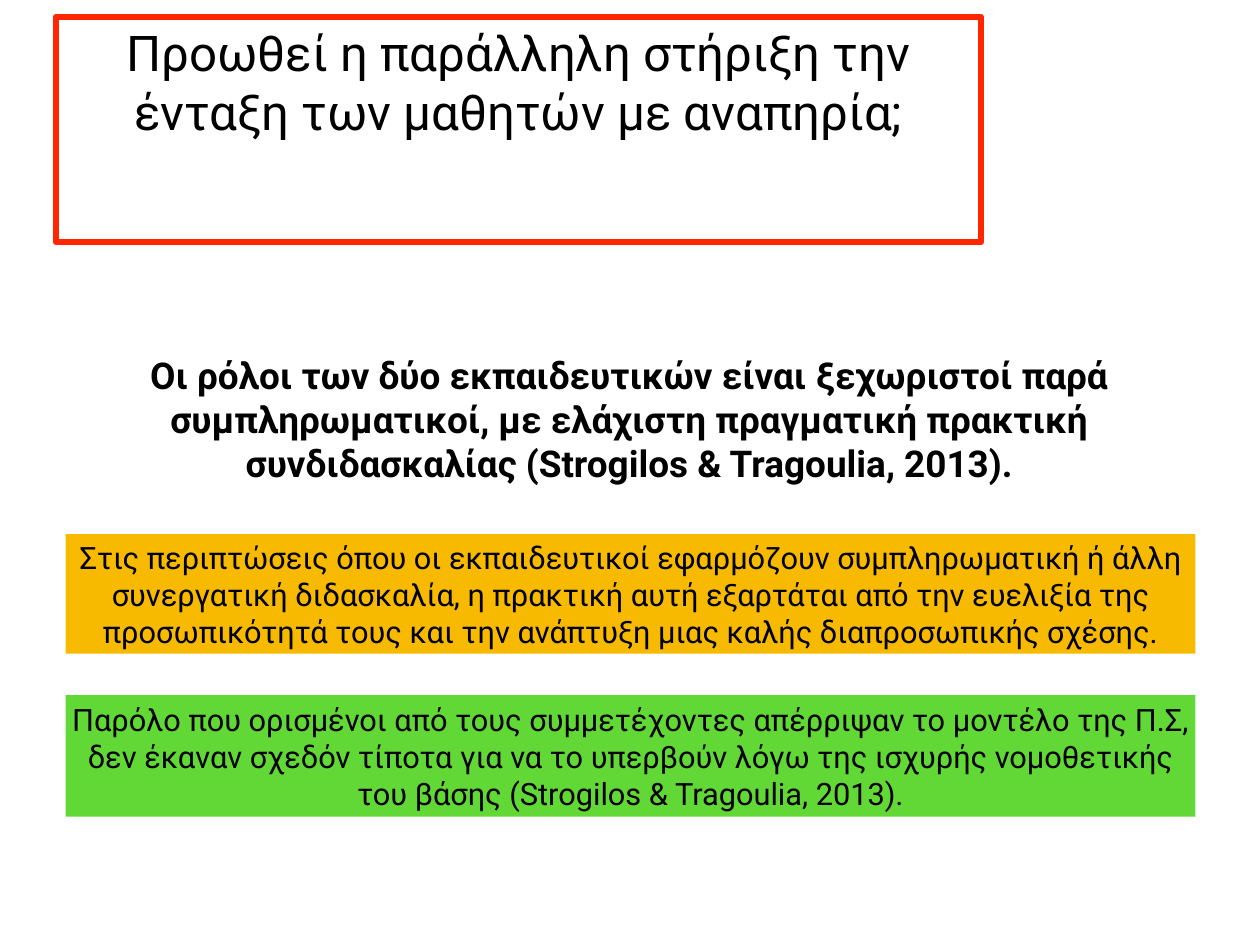
import pptx
import pptx.dml.color
import pptx.enum.shapes
import pptx.enum.text
import pptx.util

Inches = pptx.util.Inches
Pt = pptx.util.Pt
ANCHOR = pptx.enum.text.MSO_ANCHOR

FONT = "Roboto"
COLORS = {
    "text": "000000",
    "title_border": "FF2600",
    "practice": "F7BA01",
    "legislation": "61D836",
}

TITLE = "Προωθεί η παράλληλη στήριξη την ένταξη των μαθητών με αναπηρία;"
ROLES = (
    "Οι ρόλοι των δύο εκπαιδευτικών είναι ξεχωριστοί παρά συμπληρωματικοί, "
    "με ελάχιστη πραγματική πρακτική συνδιδασκαλίας (Strogilos & Tragoulia, 2013)."
)
PRACTICE = (
    "Στις περιπτώσεις όπου οι εκπαιδευτικοί εφαρμόζουν συμπληρωματική ή άλλη "
    "συνεργατική διδασκαλία, η πρακτική αυτή εξαρτάται από την ευελιξία της "
    "προσωπικότητά τους και την ανάπτυξη μιας καλής διαπροσωπικής σχέσης."
)
LEGISLATION = (
    "Παρόλο που ορισμένοι από τους συμμετέχοντες απέρριψαν το μοντέλο της Π.Σ, "
    "δεν έκαναν σχεδόν τίποτα για να το υπερβούν λόγω της ισχυρής νομοθετικής "
    "του βάσης (Strogilos & Tragoulia, 2013)."
)


def rgb(name):
    return pptx.dml.color.RGBColor.from_string(COLORS[name])


def set_text(sp, text, size, bold=False, anchor=ANCHOR.MIDDLE):
    tf = sp.text_frame
    tf.text = text
    tf.word_wrap = True
    tf.vertical_anchor = anchor
    tf.margin_left = tf.margin_right = Inches(0.06)
    tf.margin_top = tf.margin_bottom = Inches(0.06)
    p = tf.paragraphs[0]
    p.alignment = pptx.enum.text.PP_ALIGN.CENTER
    font = p.runs[0].font
    font.name = FONT
    font.size = Pt(size)
    font.bold = bold
    font.color.rgb = rgb("text")


def add_statement(slide, left, top, width, height, text):
    sp = slide.shapes.add_textbox(
        Inches(left), Inches(top), Inches(width), Inches(height))
    set_text(sp, text, 30, bold=True)


def add_rectangle(slide, left, top, width, height, fill=None, line=None):
    sp = slide.shapes.add_shape(
        pptx.enum.shapes.MSO_SHAPE.RECTANGLE,
        Inches(left), Inches(top), Inches(width), Inches(height))
    sp.shadow.inherit = False
    if fill:
        sp.fill.solid()
        sp.fill.fore_color.rgb = rgb(fill)
    else:
        sp.fill.background()
    if line:
        sp.line.color.rgb = rgb(line)
        sp.line.width = Pt(5)
    else:
        sp.line.fill.background()
    return sp


def add_finding(slide, top, height, text, fill):
    """Add a full-width coloured band with a research finding."""
    sp = add_rectangle(slide, 0.74, top, 12.75, height, fill=fill)
    set_text(sp, text, 25)


def add_title(slide, text):
    sp = add_rectangle(slide, 0.63, 0.19, 10.44, 2.54, line="title_border")
    set_text(sp, text, 40, anchor=ANCHOR.TOP)


def main():
    prs = pptx.Presentation()
    prs.slide_width = Inches(14.22)
    prs.slide_height = Inches(10.67)
    slide = prs.slides.add_slide(prs.slide_layouts[6])

    add_title(slide, TITLE)
    add_statement(slide, 1.3, 3.91, 11.61, 1.64, ROLES)
    add_finding(slide, 6.03, 1.35, PRACTICE, "practice")
    add_finding(slide, 7.85, 1.37, LEGISLATION, "legislation")

    prs.save("out.pptx")


if __name__ == "__main__":
    main()
